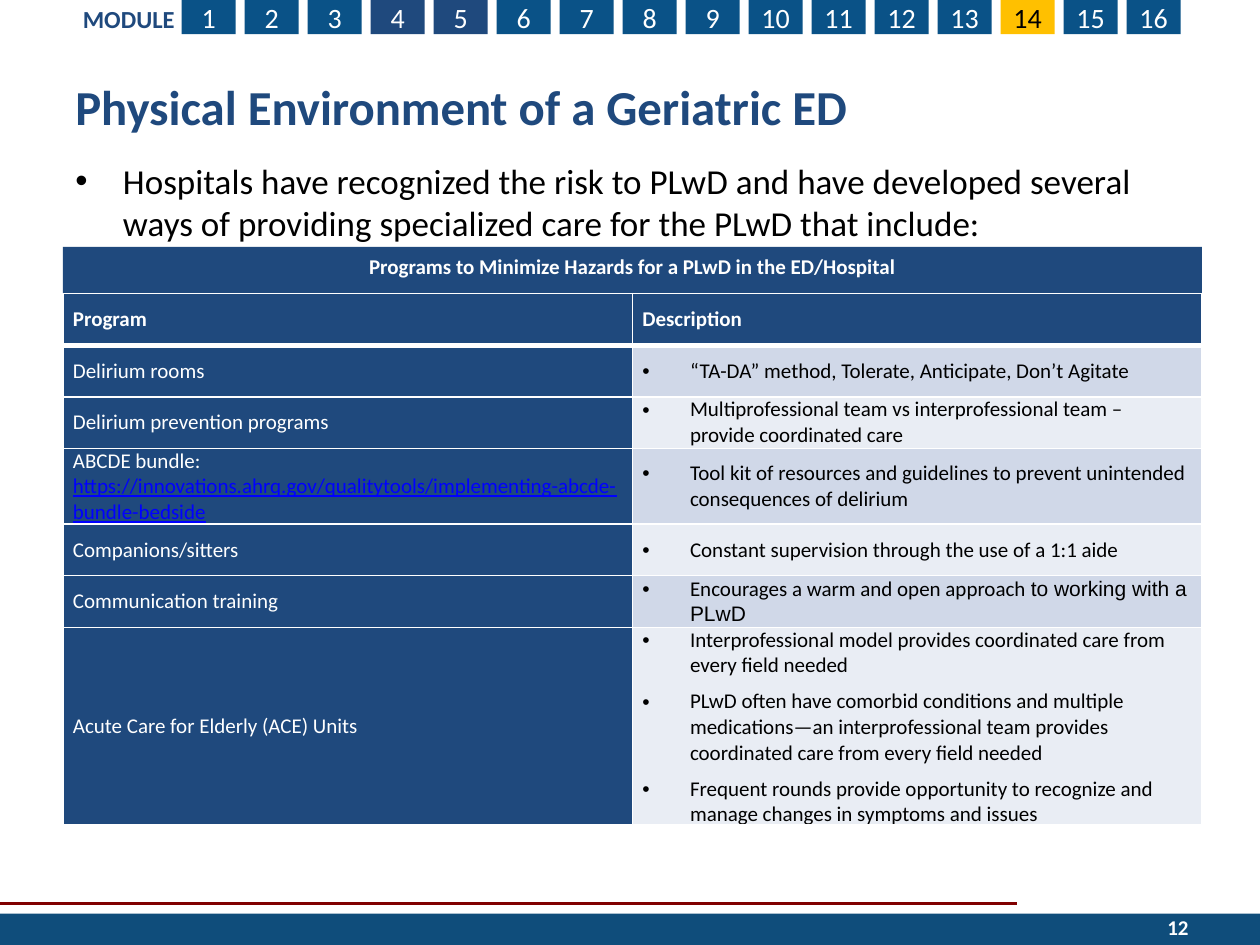
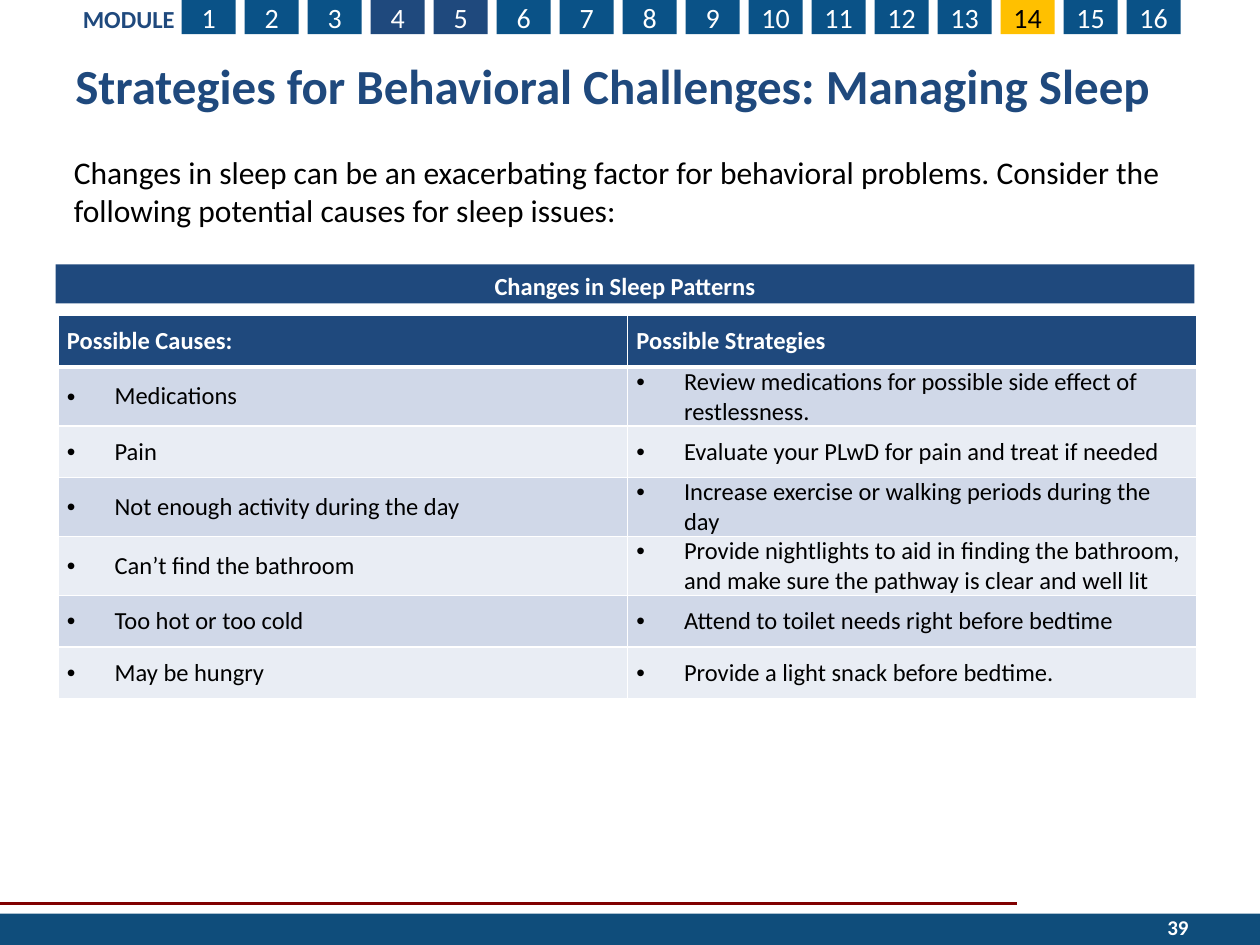
from copy import deepcopy

from pptx import Presentation
from pptx.dml.color import RGBColor
from pptx.enum.shapes import MSO_CONNECTOR as CONN, MSO_SHAPE as SHAPE
from pptx.enum.text import MSO_ANCHOR as ANCHOR, PP_ALIGN as ALIGN
from pptx.oxml.ns import qn
from pptx.util import Cm, Pt
from lxml import etree

WHITE = RGBColor(0xFF, 0xFF, 0xFF)
BLACK = RGBColor(0x00, 0x00, 0x00)
NAVY = RGBColor(0x1F, 0x49, 0x7D)
TEAL = RGBColor(0x0A, 0x52, 0x87)
FOOTER = RGBColor(0x0F, 0x4D, 0x7B)
GOLD = RGBColor(0xFF, 0xC0, 0x00)
MAROON = RGBColor(0x80, 0x00, 0x00)
LINK = RGBColor(0x00, 0x00, 0xFF)
BANDS = (RGBColor(0xD0, 0xD8, 0xE8), RGBColor(0xE9, 0xED, 0xF4))

FONT = "Calibri"
HANGING = Cm(0.96)
TABLE_W = 22.96
ROW_H = 1.04
MODULES = 16
CURRENT_MODULE = 14
NAVY_MODULES = (4, 5)

HAZARD_HEADER = ("Program", "Description")
HAZARD_ROWS = [
    ("Delirium rooms", "“TA-DA” method, Tolerate, Anticipate, Don’t Agitate"),
    ("Delirium prevention programs",
     "Multiprofessional team vs interprofessional team – provide coordinated care"),
    ([[("ABCDE bundle:", {}), ("\n", {}),
       ("https://innovations.ahrq.gov/qualitytools/implementing-abcde-bundle-bedside",
        {"color": LINK, "underline": True})]],
     "Tool kit of resources and guidelines to prevent unintended consequences of delirium"),
    ("Companions/sitters", "Constant supervision through the use of a 1:1 aide"),
    ("Communication training",
     [[("Encourages a warm and open approach ", {}),
       ("to working with a PLwD", {"font": "Arial"})]]),
    ("Acute Care for Elderly (ACE) Units",
     ["Interprofessional model provides coordinated care from every field needed",
      "PLwD often have comorbid conditions and multiple medications—an "
      "interprofessional team provides coordinated care from every field needed",
      "Frequent rounds provide opportunity to recognize and manage changes "
      "in symptoms and issues"]),
]

SLEEP_HEADER = ("Possible Causes:", "Possible Strategies")
SLEEP_ROWS = [
    ("Medications", "Review medications for possible side effect of restlessness."),
    ("Pain", "Evaluate your PLwD for pain and treat if needed"),
    ("Not enough activity during the day",
     "Increase exercise or walking periods during the day"),
    ("Can’t find the bathroom",
     "Provide nightlights to aid in finding the bathroom, and make sure "
     "the pathway is clear and well lit"),
    ("Too hot or too cold", "Attend to toilet needs right before bedtime"),
    ("May be hungry", "Provide a light snack before bedtime."),
]


def add_bullet(p):
    pPr = p._p.get_or_add_pPr()
    pPr.set("marL", str(HANGING))
    pPr.set("indent", str(-HANGING))
    etree.SubElement(pPr, qn("a:buFont")).set("typeface", "Arial")
    etree.SubElement(pPr, qn("a:buChar")).set("char", "•")


def add_run(p, text, size, color, bold, font=FONT, underline=False):
    if text == "\n":
        p.add_line_break()
        p._p[-1].append(deepcopy(p.runs[-1].font._element))
        return
    r = p.add_run()
    r.text = text
    r.font.name = font
    r.font.size = Pt(size)
    r.font.bold = bold
    r.font.underline = underline
    r.font.color.rgb = color


def write(tf, text, size=12, color=BLACK, bold=False, align=ALIGN.LEFT,
          bullet=False, after=0):
    paragraphs = [text] if isinstance(text, str) else text
    for i, content in enumerate(paragraphs):
        p = tf.paragraphs[0] if i == 0 else tf.add_paragraph()
        p.alignment = align
        p.space_after = Pt(after)
        if bullet:
            add_bullet(p)
        runs = [(content, {})] if isinstance(content, str) else content
        for piece, changes in runs:
            add_run(p, piece, **{"size": size, "color": color, "bold": bold, **changes})


def add_text(slide, box, text, anchor=ANCHOR.TOP, **fmt):
    tf = slide.shapes.add_textbox(*map(Cm, box)).text_frame
    tf.word_wrap = True
    tf.vertical_anchor = anchor
    write(tf, text, **fmt)


def add_bar(slide, box, fill, text="", anchor=ANCHOR.TOP, **fmt):
    sp = slide.shapes.add_shape(SHAPE.RECTANGLE, *map(Cm, box))
    sp.shadow.inherit = False
    sp.fill.solid()
    sp.fill.fore_color.rgb = fill
    sp.line.fill.background()
    if text:
        tf = sp.text_frame
        tf.margin_left = tf.margin_right = 0
        tf.vertical_anchor = anchor
        write(tf, text, align=ALIGN.CENTER, **fmt)


def add_rule(slide, x1, x2, y):
    line = slide.shapes.add_connector(CONN.STRAIGHT, Cm(x1), Cm(y), Cm(x2), Cm(y))
    line.line.color.rgb = MAROON
    line.line.width = Pt(1.5)
    etree.SubElement(line._element.spPr, qn("a:effectLst"))


def set_borders(cell, **widths):
    tcPr = cell._tc.get_or_add_tcPr()
    for i, side in enumerate("LRTB"):
        ln = etree.Element(qn(f"a:ln{side}"), w=str(Pt(widths.get(side, 1))))
        fill = etree.SubElement(ln, qn("a:solidFill"))
        etree.SubElement(fill, qn("a:srgbClr")).set("val", str(WHITE))
        tcPr.insert(i, ln)


def fill_cell(cell, text, fill, margin, **fmt):
    cell.fill.solid()
    cell.fill.fore_color.rgb = fill
    cell.margin_left = cell.margin_right = Cm(margin)
    cell.margin_top = cell.margin_bottom = 0
    cell.vertical_anchor = ANCHOR.MIDDLE
    write(cell.text_frame, text, after=6, **fmt)


def add_care_table(slide, left, top, header, rows, size, margin, navy_labels=False):
    count = len(rows) + 1
    table = slide.shapes.add_table(count, 2, Cm(left), Cm(top), Cm(TABLE_W),
                                   Cm(ROW_H * count)).table
    table.first_row = table.horz_banding = False
    for row in table.rows:
        row.height = Cm(ROW_H)
    for c, text in enumerate(header):
        cell = table.cell(0, c)
        fill_cell(cell, text, NAVY, margin, size=size, color=WHITE, bold=True)
        set_borders(cell, B=3)
    for r, row in enumerate(rows):
        for c, text in enumerate(row):
            label = navy_labels and c == 0
            cell = table.cell(r + 1, c)
            fill_cell(cell, text, NAVY if label else BANDS[r % 2], margin, size=size,
                      color=WHITE if label else BLACK, bullet=not label)
            set_borders(cell, T=3 if r == 0 else 1)


def add_module_tabs(slide):
    for n in range(1, MODULES + 1):
        current = n == CURRENT_MODULE
        fill = GOLD if current else NAVY if n in NAVY_MODULES else TEAL
        add_bar(slide, (3.66 + 1.27 * (n - 1), 0, 1.09, 0.69), fill, str(n),
                anchor=ANCHOR.MIDDLE, size=16, color=BLACK if current else WHITE)
    add_text(slide, (1.42, -0.05, 2.57, 0.86), "MODULE", size=14, color=NAVY, bold=True)


def add_base_slide(prs, number, title, title_box, title_size):
    slide = prs.slides.add_slide(prs.slide_layouts[6])
    add_rule(slide, 0, 20.5, 18.21)
    add_bar(slide, (0, 18.42, 25.4, 0.63), FOOTER)
    add_module_tabs(slide)
    add_text(slide, (18.29, 18.19, 5.92, 1.02), str(number), anchor=ANCHOR.MIDDLE,
             color=WHITE, bold=True, align=ALIGN.RIGHT)
    add_text(slide, title_box, title, anchor=ANCHOR.MIDDLE, size=title_size,
             color=NAVY, bold=True)
    return slide


def build_environment(prs):
    slide = add_base_slide(prs, 12, "Physical Environment of a Geriatric ED",
                           (1.27, 1.55, 22.86, 1.19), 27.9)
    add_text(slide, (1.27, 3.1, TABLE_W, 3.23),
             "Hospitals have recognized the risk to PLwD and have developed several "
             "ways of providing specialized care for the PLwD that include:",
             size=20, bullet=True)
    add_bar(slide, (1.27, 4.98, TABLE_W, 0.94), NAVY,
            "Programs to Minimize Hazards for a PLwD in the ED/Hospital",
            color=WHITE, bold=True)
    add_care_table(slide, 1.27, 5.92, HAZARD_HEADER, HAZARD_ROWS, 12, 0.2,
                   navy_labels=True)


def build_sleep(prs):
    slide = add_base_slide(prs, 39, "Strategies for Behavioral Challenges: Managing Sleep",
                           (1.27, 0.64, 22.86, 2.13), 28)
    add_text(slide, (1.24, 2.97, TABLE_W, 1.8),
             "Changes in sleep can be an exacerbating factor for behavioral problems. "
             "Consider the following potential causes for sleep issues:", size=18)
    add_bar(slide, (1.12, 5.33, TABLE_W, 0.79), NAVY, "Changes in Sleep Patterns",
            size=14, color=WHITE, bold=True)
    add_care_table(slide, 1.17, 6.36, SLEEP_HEADER, SLEEP_ROWS, 14, 0.18)


def main():
    prs = Presentation()
    prs.slide_width, prs.slide_height = Cm(25.4), Cm(19.05)
    build_environment(prs)
    build_sleep(prs)
    prs.save("out.pptx")


if __name__ == "__main__":
    main()
